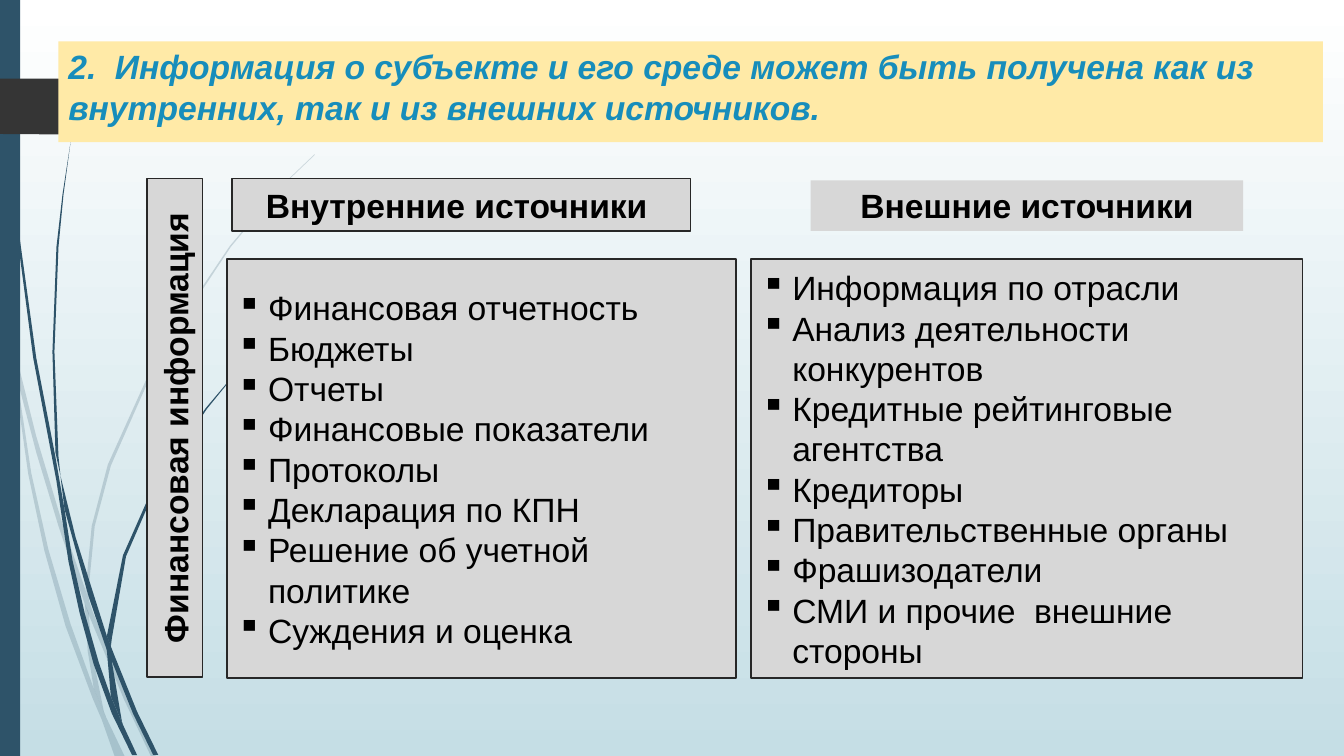
"""Build a slide on internal and external sources of information about an entity."""
from pptx import Presentation
from pptx.dml.color import RGBColor
from pptx.enum.shapes import MSO_SHAPE
from pptx.enum.text import MSO_ANCHOR, PP_ALIGN
from pptx.oxml.ns import qn
from pptx.util import Pt
from lxml.etree import SubElement

PX = 9144
THEME = {
    "font": "Arial", "size": Pt(24), "leading": Pt(28.8), "border": Pt(1.25),
    "navy": RGBColor.from_string("2E5369"),
    "tab": RGBColor.from_string("353535"),
    "banner": RGBColor.from_string("FFEAA7"),
    "title": RGBColor.from_string("178DBB"),
    "panel": RGBColor.from_string("D7D7D7"),
    "line": RGBColor.from_string("272727"),
    "text": RGBColor.from_string("000000"),
    "bg": [RGBColor.from_string("FFFFFF"), RGBColor.from_string("C5DEE5")],
}

prs = Presentation()
prs.slide_width, prs.slide_height = 1333 * PX, 750 * PX
s = prs.slides.add_slide(prs.slide_layouts[6])


def outline(points, color="navy", alpha=100):
    fb = s.shapes.build_freeform(*points[0], scale=PX)
    fb.add_line_segments(points[1:], close=True)
    sp = fb.convert_to_shape()
    sp.shadow.inherit = False
    sp.line.fill.background()
    sp.fill.solid()
    sp.fill.fore_color.rgb = THEME[color]
    if alpha < 100:
        clr = sp._element.spPr.find(qn("a:solidFill"))[0]
        SubElement(clr, qn("a:alpha")).set("val", str(alpha * 1000))


def box(left, top, width, height, paragraphs=(), fill="panel", color="text", bold=False, italic=False,
        border=False, bullets=False, align=PP_ALIGN.LEFT, anchor=MSO_ANCHOR.MIDDLE, vert=None):
    sp = s.shapes.add_shape(MSO_SHAPE.RECTANGLE, left * PX, top * PX, width * PX, height * PX)
    sp.shadow.inherit = False
    sp.fill.solid()
    sp.fill.fore_color.rgb = THEME[fill]
    if border:
        sp.line.color.rgb = THEME["line"]
        sp.line.width = THEME["border"]
    else:
        sp.line.fill.background()
    tf = sp.text_frame
    tf.word_wrap = True
    tf.vertical_anchor = anchor
    if vert:
        sp._element.txBody.bodyPr.set("vert", vert)
    for i, text in enumerate(paragraphs):
        p = tf.add_paragraph() if i else tf.paragraphs[0]
        p.alignment = align
        p.line_spacing = THEME["leading"]
        if bullets:
            pPr = p._p.get_or_add_pPr()
            pPr.set("marL", str(31 * PX))
            pPr.set("indent", str(-31 * PX))
            SubElement(pPr, qn("a:buChar")).set("char", "▪")
        r = p.add_run()
        r.text = text
        r.font.name, r.font.size = THEME["font"], THEME["size"]
        r.font.bold, r.font.italic = bold, italic
        r.font.color.rgb = THEME[color]


bg = s.background.fill
bg.gradient()
bg.gradient_angle = 270
for stop, position, color in zip(bg.gradient_stops, (0, 1), THEME["bg"]):
    stop.position = position
    stop.color.rgb = color

pale_wisps = [
    [(0, 282), (9, 322), (17, 376), (31, 469), (48, 545), (70, 619), (93, 683), (105, 711), (124, 751),
     (114, 751), (101, 714), (92, 693), (65, 621), (44, 546), (28, 470), (11, 350), (0, 299)],
    [(14, 345), (36, 433), (62, 520), (85, 586), (92, 607), (127, 692), (155, 751),
     (150, 751), (123, 694), (88, 610), (84, 599), (58, 522), (36, 449), (17, 376)],
    [(84, 599), (87, 646), (93, 683), (105, 711), (103, 706), (91, 646), (88, 608)],
    [(312, 153), (289, 175), (268, 197), (228, 244), (158, 348), (107, 461), (91, 522), (85, 584),
     (88, 596), (88, 584), (94, 522), (110, 462), (160, 349), (229, 245), (268, 198), (290, 175), (312, 154)],
]
dark_wisps = [
    [(3, 0), (4, 48), (7, 110), (17, 233), (33, 355), (56, 477), (68, 557), (79, 608), (93, 659), (111, 708),
     (131, 749), (136, 749), (122, 719), (110, 691), (98, 657), (84, 608), (72, 556), (64, 505), (55, 453),
     (36, 355), (19, 232), (8, 109), (5, 48), (4, 0)],
    [(60, 472), (75, 533), (93, 590), (106, 631), (113, 649), (136, 706), (157, 749),
     (152, 749), (132, 708), (111, 656), (106, 645), (88, 592), (64, 505)],
    [(70, 141), (62, 193), (56, 245), (52, 349), (55, 449), (60, 472), (58, 453), (54, 349), (58, 245), (63, 193)],
    [(106, 631), (106, 645), (110, 691), (122, 719), (121, 716), (111, 656), (110, 641)],
    [(260, 344), (245, 358), (231, 373), (204, 405), (156, 474), (122, 551), (106, 631), (110, 641),
     (111, 633), (125, 552), (158, 476), (205, 406), (231, 374), (245, 359), (261, 344)],
]
for wisp in pale_wisps:
    outline(wisp, alpha=20)
for wisp in dark_wisps:
    outline(wisp)

box(0, 0, 20, 750, fill="navy")
outline([(0, 78), (147, 78), (174, 106), (147, 134), (0, 133)], color="tab")

box(58, 41, 1254, 100,
    ["2.  Информация о субъекте и его среде может быть получена как из внутренних, так и из внешних источников."],
    fill="banner", color="title", bold=True, italic=True, anchor=MSO_ANCHOR.TOP)

heading = {"bold": True, "align": PP_ALIGN.CENTER}
box(230, 177, 455, 52, ["Внутренние источники "], border=True, **heading)
box(146, 177, 55, 495, ["Финансовая информация"], border=True, vert="vert270", **heading)

internal_sources = [
    "Финансовая отчетность", "Бюджеты", "Отчеты", "Финансовые показатели", "Протоколы",
    "Декларация по КПН", "Решение об учетной политике", "Суждения и оценка",
]
external_sources = [
    "Информация по отрасли", "Анализ деятельности конкурентов", "Кредитные рейтинговые агентства",
    "Кредиторы", "Правительственные органы", "Фрашизодатели", "СМИ и прочие  внешние стороны",
]
for left, width, sources in ((225, 505, internal_sources), (745, 547, external_sources)):
    box(left, 257, width, 416, sources, border=True, bullets=True)

box(804, 179, 429, 50, ["Внешние источники"], anchor=MSO_ANCHOR.TOP, **heading)

prs.save("out.pptx")
